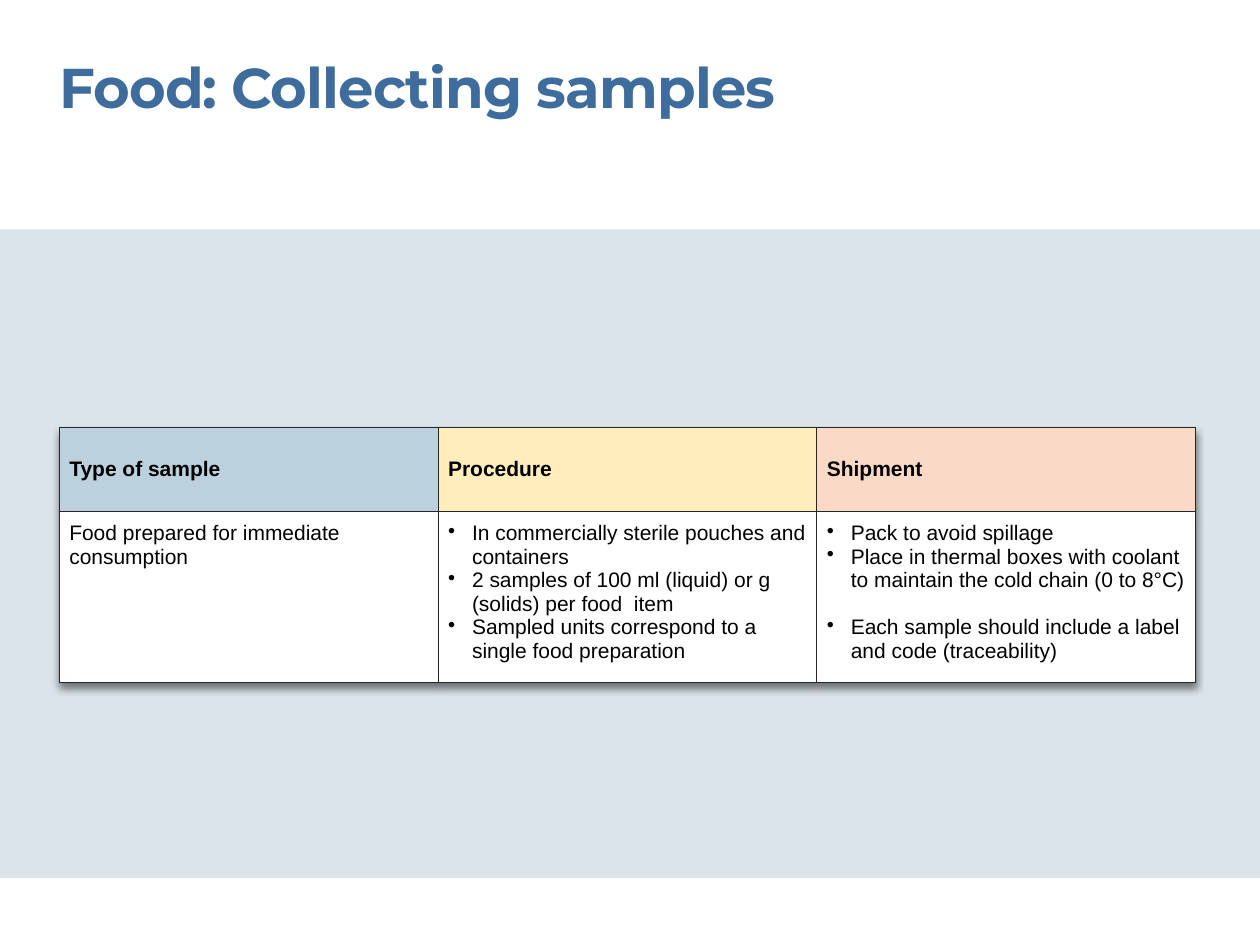
from pptx import Presentation
from pptx.dml.color import RGBColor
from pptx.enum.shapes import MSO_SHAPE
from pptx.enum.text import MSO_ANCHOR, PP_ALIGN
from pptx.oxml import parse_xml
from pptx.oxml.ns import nsdecls
from pptx.util import Inches, Pt

RECTANGLE = MSO_SHAPE.RECTANGLE
TOP, MIDDLE = MSO_ANCHOR.TOP, MSO_ANCHOR.MIDDLE
LEFT = PP_ALIGN.LEFT
TITLE_ONLY = 5

COLORS = {
    "title": "3D6C9D",
    "band": "DBE4EA",
    "border": "262626",
    "text": "000000",
    "body": "FFFFFF",
    "sample": "BBD2DE",
    "procedure": "FFEDBC",
    "shipment": "FADAC7",
}

# Each column: header, header color, body lines, bulleted or not
COLUMNS = [
    ("Type of sample", "sample", ["Food prepared for immediate consumption"], False),
    ("Procedure", "procedure", [
        "In commercially sterile pouches and containers",
        "2 samples of 100 ml (liquid) or g (solids) per food  item",
        "Sampled units correspond to a single food preparation",
    ], True),
    ("Shipment", "shipment", [
        "Pack to avoid spillage",
        "Place in thermal boxes with coolant to maintain the cold chain (0 to 8°C)",
        "Each sample should include a label and code (traceability)",
    ], True),
]


def rgb(name):
    return RGBColor.from_string(COLORS[name])


class SlideBuilder:
    title_font, body_font = "Montserrat", "Arial"
    title_size, body_size = Pt(32), Pt(12)
    side_margin = Inches(0.08)
    bullet_indent = Inches(0.19)

    def __init__(self, slide):
        self.slide = slide

    def style(self, para, font_name, size, color, bold):
        para.alignment = LEFT
        font = para.font
        font.name, font.size, font.bold = font_name, size, bold
        font.color.rgb = rgb(color)

    def band(self, left, top, width, height):
        shape = self.slide.shapes.add_shape(RECTANGLE, left, top, width, height)
        shape.shadow.inherit = False
        shape.fill.solid()
        shape.fill.fore_color.rgb = rgb("band")
        shape.line.fill.background()
        # Keep the band behind the title
        self.slide.shapes._spTree.insert(2, shape._element)

    def title(self, text, left, top, width, height):
        title = self.slide.shapes.title
        title.left, title.top, title.width, title.height = left, top, width, height
        frame = title.text_frame
        frame.margin_left = frame.margin_right = 0
        frame.margin_top = frame.margin_bottom = 0
        frame.vertical_anchor = TOP
        frame.word_wrap = True
        frame.text = text
        para = frame.paragraphs[0]
        self.style(para, self.title_font, self.title_size, "title", True)
        para.runs[0]._r.get_or_add_rPr().set("spc", "-50")

    def bullet(self, para):
        properties = para._p.get_or_add_pPr()
        properties.set("marL", str(self.bullet_indent))
        properties.set("indent", str(-self.bullet_indent))
        properties.insert_element_before(
            parse_xml(f'<a:buChar {nsdecls("a")} char="•"/>'),
            "a:tabLst", "a:defRPr", "a:extLst")

    def cell(self, cell, lines, fill, bold=False, bulleted=False,
             anchor=TOP, end_margin=Inches(0.08)):
        cell.margin_left = cell.margin_right = self.side_margin
        cell.margin_top = cell.margin_bottom = end_margin
        cell.vertical_anchor = anchor
        cell.fill.solid()
        cell.fill.fore_color.rgb = rgb(fill)
        cell.text = "\n".join(lines)
        for para in cell.text_frame.paragraphs:
            self.style(para, self.body_font, self.body_size, "text", bold)
            if bulleted:
                self.bullet(para)
        self.borders(cell)

    def borders(self, cell):
        properties = cell._tc.get_or_add_tcPr()
        for index, side in enumerate(("lnL", "lnR", "lnT", "lnB")):
            properties.insert(index, parse_xml(
                f'<a:{side} {nsdecls("a")} w="{Pt(0.5)}"><a:solidFill>'
                f'<a:srgbClr val="{COLORS["border"]}"/></a:solidFill></a:{side}>'))

    def table(self, columns, left, top, width, row_heights):
        height = sum(row_heights)
        table = self.slide.shapes.add_table(
            len(row_heights), len(columns), left, top, width, height).table
        table.horz_banding = False
        for row, row_height in zip(table.rows, row_heights):
            row.height = row_height
        for index, (header, color, lines, bulleted) in enumerate(columns):
            self.cell(table.cell(0, index), [header], color, bold=True,
                      anchor=MIDDLE, end_margin=Inches(0.05))
            self.cell(table.cell(1, index), lines, "body", bulleted=bulleted)
        # Soft shadow below the table
        table._tbl.tblPr.insert(0, parse_xml(
            f'<a:effectLst {nsdecls("a")}><a:outerShdw blurRad="{Pt(4)}" '
            f'dist="{Pt(3)}" dir="5400000" algn="t" rotWithShape="0">'
            '<a:srgbClr val="000000"><a:alpha val="50000"/></a:srgbClr>'
            '</a:outerShdw></a:effectLst>'))
        return table


def main():
    deck = Presentation()
    deck.slide_width, deck.slide_height = Inches(10), Inches(7.5)
    page = SlideBuilder(deck.slides.add_slide(deck.slide_layouts[TITLE_ONLY]))

    # Background band and title
    page.band(0, Inches(1.82), deck.slide_width, Inches(5.15))
    page.title("Food: Collecting samples",
               Inches(0.47), Inches(0.42), Inches(8.55), Inches(0.54))

    # Sampling table
    table = page.table(COLUMNS, Inches(0.47), Inches(3.39), Inches(9.02),
                       [Inches(0.67), Inches(1.36)])
    # One line of space sets the labelling rule apart
    table.cell(1, 2).text_frame.paragraphs[1].space_after = Pt(13.4)

    deck.save("out.pptx")


if __name__ == "__main__":
    main()
